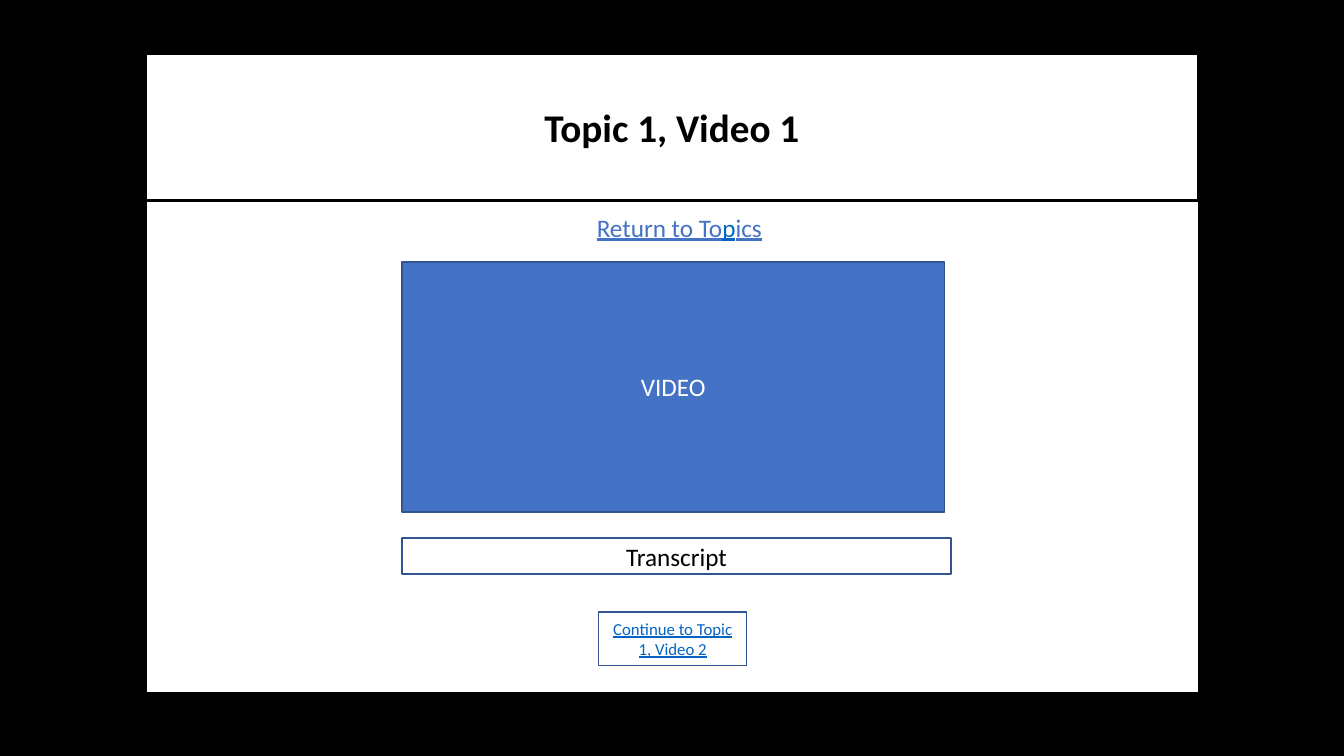
from dataclasses import dataclass

from pptx import Presentation
from pptx.dml.color import RGBColor
from pptx.enum import shapes, text
from pptx.util import Cm, Pt

BLACK, WHITE = "000000", "FFFFFF"
BLUE, NAVY, LINK = "4472C4", "325491", "0563C1"


@dataclass
class Box:
    left: float
    top: float
    width: float
    height: float
    runs: tuple[tuple[str, str], ...] = ()  # (wording, colour)
    size: float = 18
    fill: str = WHITE
    line: str = NAVY
    weight: float = 1
    bold: bool = False
    underline: bool = False


PANEL = Box(3.68, 1.35, 26.54, 16.1, line=BLACK)
TITLE = Box(3.66, 1.35, 26.54, 3.71, (("Topic 1, Video 1", BLACK),),
            size=28, line=BLACK, weight=2.25, bold=True)
CONTENT = [
    Box(15.09, 15.42, 3.73, 1.35, (("Continue to Topic 1, Video 2", LINK),),
        size=12, underline=True),
    Box(7.95, 5.44, 18.34, 0.56,
        (("Return to To", BLUE), ("p", LINK), ("ics", BLUE)),
        line=WHITE, underline=True),
    Box(10.13, 6.6, 13.67, 6.3, (("VIDEO", WHITE),), fill=BLUE),
    Box(10.13, 13.56, 13.84, 0.91, (("Transcript", BLACK),)),
]


def rgb(colour: str) -> RGBColor:
    return RGBColor.from_string(colour)


def format_box(sp, box: Box) -> None:
    """Place a shape, then give it its fill, outline and wording."""
    sp.left, sp.top = Cm(box.left), Cm(box.top)
    sp.width, sp.height = Cm(box.width), Cm(box.height)
    sp.fill.solid()
    sp.fill.fore_color.rgb = rgb(box.fill)
    sp.line.color.rgb = rgb(box.line)
    sp.line.width = Pt(box.weight)

    tf = sp.text_frame
    tf.word_wrap = True
    tf.auto_size = text.MSO_AUTO_SIZE.NONE
    tf.vertical_anchor = text.MSO_ANCHOR.MIDDLE
    p = tf.paragraphs[0]
    p.alignment = text.PP_ALIGN.CENTER
    p.line_spacing = 1.0
    p.space_before = Pt(0)
    for wording, colour in box.runs:
        r = p.add_run()
        r.text = wording
        r.font.name = "Calibri"
        r.font.size = Pt(box.size)
        r.font.bold = box.bold
        r.font.underline = box.underline
        r.font.color.rgb = rgb(colour)


def add_box(s, box: Box):
    sp = s.shapes.add_shape(shapes.MSO_SHAPE.RECTANGLE, 0, 0, 0, 0)
    sp.shadow.inherit = False
    format_box(sp, box)
    return sp


def main() -> None:
    prs = Presentation()
    prs.slide_width, prs.slide_height = Cm(33.87), Cm(19.05)
    s = prs.slides.add_slide(prs.slide_layouts.get_by_name("Title Only"))
    s.background.fill.solid()
    s.background.fill.fore_color.rgb = rgb(BLACK)

    # White page, placed behind the title
    panel = add_box(s, PANEL)
    title = s.shapes.title
    title.element.addprevious(panel.element)
    format_box(title, TITLE)

    # Links, video and transcript
    for box in CONTENT:
        add_box(s, box)

    prs.save("out.pptx")


if __name__ == "__main__":
    main()
